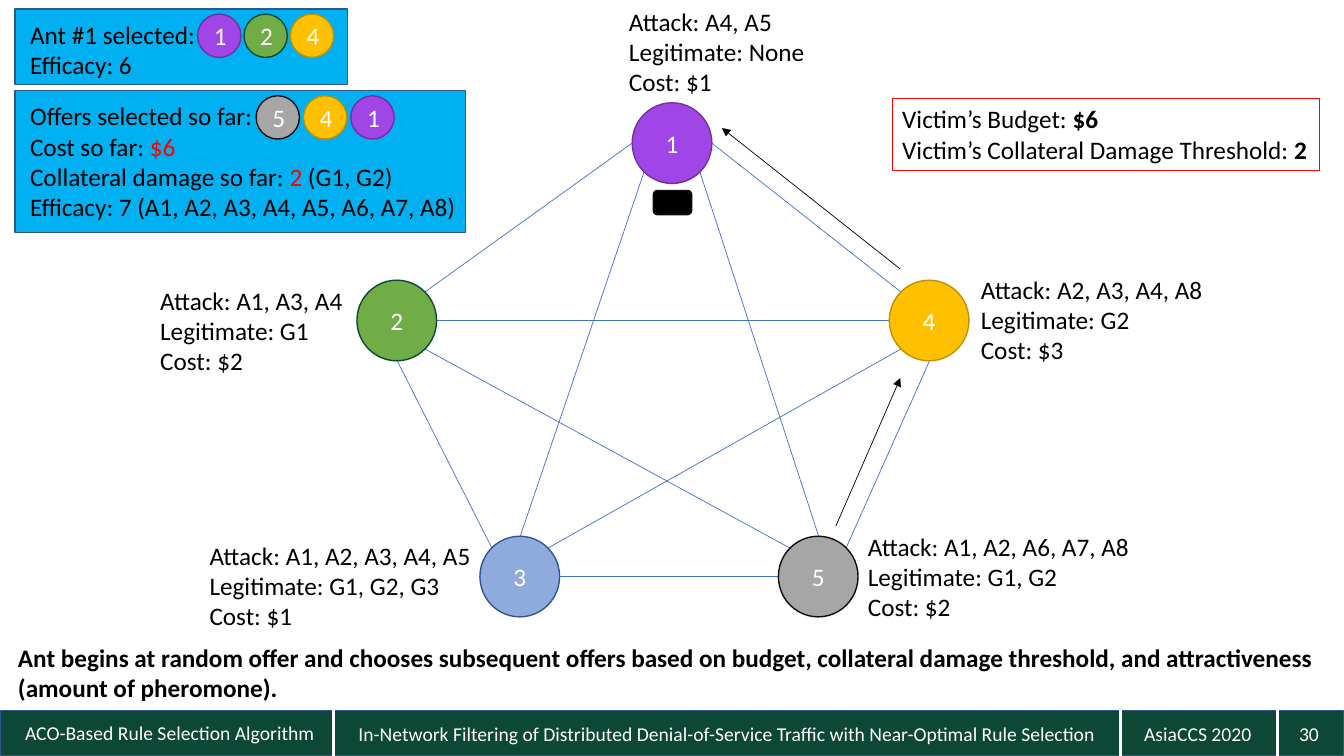
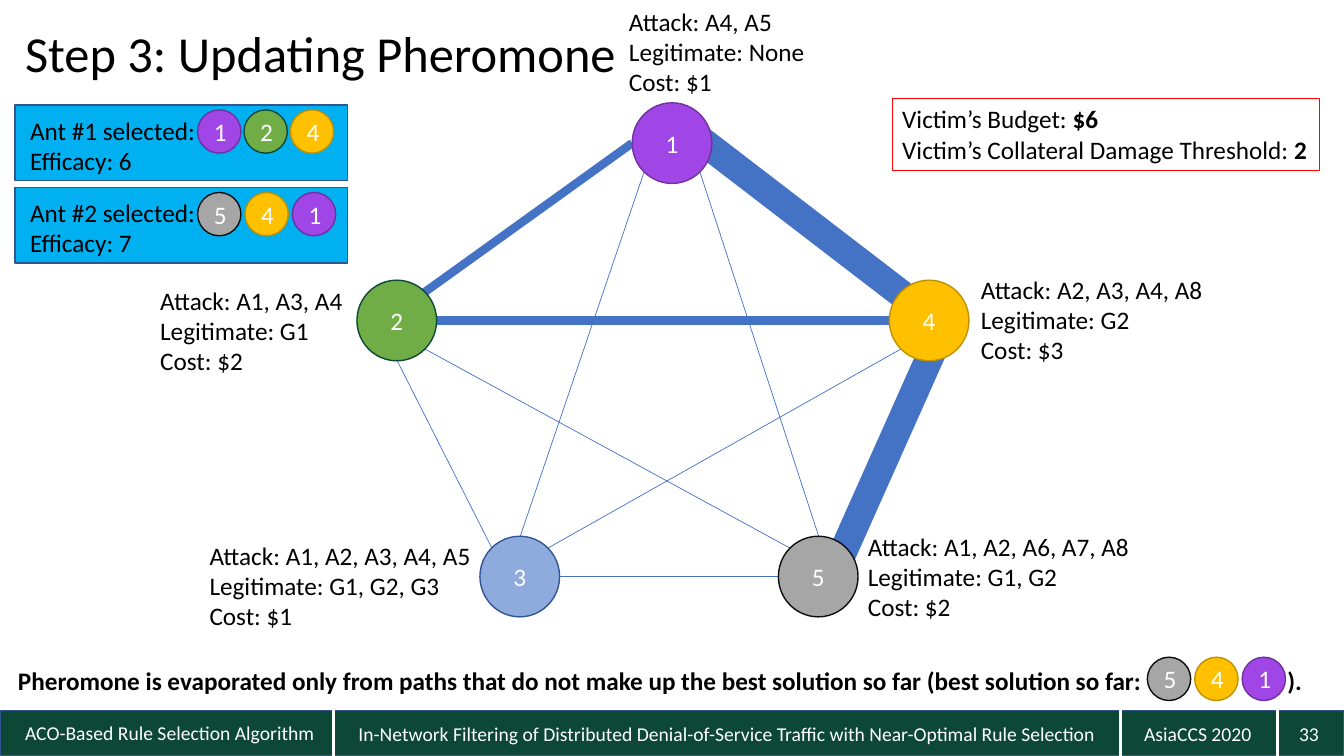
from math import cos, radians, sin

from lxml.etree import SubElement
from pptx import Presentation
from pptx.dml.color import RGBColor
from pptx.enum.shapes import MSO_CONNECTOR as Connector, MSO_SHAPE as Shape
from pptx.enum.text import MSO_ANCHOR as Anchor, PP_ALIGN as Align
from pptx.oxml.ns import qn
from pptx.util import Pt

PX = 9144  # EMU; 100 px to the inch
FONT = "Calibri"
COLORS = {
    "white": "FFFFFF", "black": "000000", "red": "FF0000",
    "panel": "00B0F0", "footer": "0D4735", "outline": "325491",
    "edge": "4472C4", "ink": "0D0D0D",
    "purple": "A046E6", "deep purple": "7030A0", "green": "70AD47",
    "blue": "8FAADC", "gray": "A6A6A6", "gold": "FFC000", "dark gold": "BF9000",
}

# Offer number: fill and outline
OFFER_COLORS = {
    1: ("purple", "deep purple"), 2: ("green", "footer"), 3: ("blue", "outline"),
    4: ("gold", "dark gold"), 5: ("gray", "ink"),
}
NODE_WIDTH, NODE_HEIGHT, TOKEN_SIZE = 79, 80, 43
NODES = {1: (627, 102), 2: (354, 278), 3: (476, 532), 4: (882, 278), 5: (772, 532)}

# Left, top, width, attack, legitimate, cost
LABELS = [
    (614, 1, 344, "A4, A5", "None", "$1"),
    (149, 278, 205, "A1, A3, A4", "G1", "$2"),
    (198, 531, 285, "A1, A2, A3, A4, A5", "G1, G2, G3", "$1"),
    (851, 522, 344, "A1, A2, A6, A7, A8", "G1, G2", "$2"),
    (963, 267, 344, "A2, A3, A4, A8", "G2", "$3"),
]

COMPASS = {name: 45 * step for step, name in
           enumerate(("E", "SE", "S", "SW", "W", "NW", "N", "NE"))}
EDGES = [
    (2, "NE", 1, "W"), (4, "NW", 1, "E"), (3, "NW", 2, "S"), (5, "NE", 4, "S"),
    (3, "E", 5, "W"), (3, "N", 1, "SW"), (1, "SE", 5, "N"), (2, "E", 4, "W"),
    (3, "NE", 4, "SW"), (2, "SE", 5, "NW"),
]


def rgb(name):
    return RGBColor.from_string(COLORS[name])


def rim(node, side):
    """Point on a node's outline in a compass direction."""
    left, top = NODES[node]
    angle = radians(COMPASS[side])
    return (round(left + NODE_WIDTH / 2 * (1 + cos(angle))),
            round(top + NODE_HEIGHT / 2 * (1 + sin(angle))))


class Builder:
    def __init__(self):
        self.deck = Presentation()
        self.deck.slide_width = 1333 * PX
        self.deck.slide_height = 750 * PX
        self.page = None

    def new_page(self, number):
        self.page = self.deck.slides.add_slide(self.deck.slide_layouts[6])
        self.footer(number)

    def shape(self, kind, left, top, width, height, fill, outline, weight=1):
        item = self.page.shapes.add_shape(
            kind, left * PX, top * PX, width * PX, height * PX)
        item.shadow.inherit = False
        if fill:
            item.fill.solid()
            item.fill.fore_color.rgb = rgb(fill)
        else:
            item.fill.background()
        item.line.color.rgb = rgb(outline)
        item.line.width = Pt(weight)
        return item

    def set_text(self, item, lines, size=18, color="black", align=Align.LEFT,
                 anchor=Anchor.TOP, bold=False, spacing=None):
        """Fill an item with lines; a line is a string or (text, mark) pairs."""
        frame = item.text_frame
        frame.word_wrap = True
        frame.vertical_anchor = anchor
        for index, line in enumerate(lines):
            para = frame.paragraphs[0] if index == 0 else frame.add_paragraph()
            para.alignment = align
            if spacing:
                para.line_spacing = spacing
            spans = [(line, None)] if isinstance(line, str) else line
            for words, mark in spans:
                span = para.add_run()
                span.text = words
                span.font.name = FONT
                span.font.size = Pt(size)
                span.font.bold = bold or mark == "bold"
                span.font.color.rgb = rgb("red" if mark == "red" else color)

    def text(self, left, top, width, height, lines, **style):
        box = self.page.shapes.add_textbox(
            left * PX, top * PX, width * PX, height * PX)
        self.set_text(box, lines, **style)

    def line(self, start, end, color="edge", weight=0.5, arrow=False):
        link = self.page.shapes.add_connector(
            Connector.STRAIGHT, *(value * PX for value in (*start, *end)))
        link.line.color.rgb = rgb(color)
        link.line.width = Pt(weight)
        properties = link.element.spPr
        if arrow:
            SubElement(properties.find(qn("a:ln")), qn("a:tailEnd"), type="triangle")
        SubElement(properties, qn("a:effectLst"))

    def offer(self, number, left, top, width, height):
        circle = self.shape(Shape.OVAL, left, top, width, height,
                            *OFFER_COLORS[number])
        self.set_text(circle, [str(number)], color="white",
                      align=Align.CENTER, anchor=Anchor.MIDDLE)

    def tokens(self, left, top, numbers, step=47):
        for index, number in enumerate(numbers):
            self.offer(number, left + index * step, top, TOKEN_SIZE, TOKEN_SIZE)

    def panel(self, top, width, height):
        self.shape(Shape.RECTANGLE, 15, top, width, height, "panel", "outline")

    def ant_panel(self, top, ant, efficacy, numbers, step=47):
        self.panel(top, 330, 75)
        self.text(20, top + 5, 201, 71,
                  [f"Ant #{ant} selected:", f"Efficacy: {efficacy}"])
        self.tokens(196, top + 5, numbers, step)

    def network(self, weights, wide_lines=()):
        """Draw the offer graph; a weight of 0 leaves an edge out."""
        for first, first_side, second, second_side in EDGES:
            weight = weights.get((first, second), 0.5)
            if weight:
                self.line(rim(first, first_side), rim(second, second_side),
                          weight=weight)
        for start, end in wide_lines:
            self.line(start, end, weight=20)
        for number, (left, top) in NODES.items():
            self.offer(number, left, top, NODE_WIDTH, NODE_HEIGHT)
        for left, top, width, attack, legitimate, cost in LABELS:
            self.text(left, top, width, 101,
                      [f"Attack: {attack}", f"Legitimate: {legitimate}",
                       f"Cost: {cost}"])

    def limits(self):
        """Box with the victim's budget and damage threshold."""
        box = self.shape(Shape.RECTANGLE, 885, 98, 424, 71, None, "red", 0.75)
        self.set_text(box, [
            [("Victim’s Budget: ", None), ("$6", "bold")],
            [("Victim’s Collateral Damage Threshold: ", None), ("2", "bold")],
        ])

    def footer(self, number):
        self.shape(Shape.RECTANGLE, 0, 705, 1333, 45, "footer", "outline")
        for left, top, width, words, align in (
            (15, 710, 315, "ACO-Based Rule Selection Algorithm", Align.LEFT),
            (345, 711, 752, "In-Network Filtering of Distributed Denial-of-Service "
             "Traffic with Near-Optimal Rule Selection", Align.CENTER),
            (1123, 711, 130, "AsiaCCS 2020", Align.CENTER),
            (1218, 711, 100, str(number), Align.RIGHT),
        ):
            self.text(left, top, width, 34, [words], size=14, color="white",
                      align=align)
        for x in (331, 1111, 1267):
            self.line((x, 697), (x, 750), "white", 2.25)


def selection_page(builder):
    builder.new_page(30)
    builder.network({})
    builder.shape(Shape.ROUNDED_RECTANGLE, 648, 189, 38, 24, "black", "ink")
    builder.limits()
    builder.ant_panel(9, 1, 6, (1, 2, 4), step=46)
    builder.panel(90, 447, 141)
    builder.text(20, 95, 455, 131, [
        "Offers selected so far:",
        [("Cost so far: ", None), ("$6", "red")],
        [("Collateral damage so far: ", None), ("2", "red"), (" (G1, G2)", None)],
        "Efficacy: 7 (A1, A2, A3, A4, A5, A6, A7, A8)",
    ])
    builder.tokens(254, 95, (5, 4, 1))
    builder.line((829, 522), (893, 375), "black", arrow=True)
    builder.line((893, 267), (716, 127), "black", arrow=True)
    builder.text(8, 632, 1311, 71, [
        "Ant begins at random offer and chooses subsequent offers based on budget, "
        "collateral damage threshold, and attractiveness (amount of pheromone)."
    ], bold=True)


def pheromone_page(builder):
    builder.new_page(33)
    builder.text(15, 0, 620, 111, ["Step 3: Updating Pheromone"], size=36,
                 anchor=Anchor.MIDDLE, spacing=0.9)
    builder.network(
        {(2, 1): 6, (2, 4): 6, (4, 1): 0, (5, 4): 0},
        wide_lines=[((905, 300), (694, 138)), ((831, 559), (926, 346))])
    builder.limits()
    builder.ant_panel(104, 1, 6, (1, 2, 4), step=46)
    builder.ant_panel(186, 2, 7, (5, 4, 1))
    builder.text(8, 655, 1140, 40, [
        "Pheromone is evaporated only from paths that do not make up the best "
        "solution so far (best solution so far:"
    ], bold=True)
    builder.tokens(1138, 652, (5, 4, 1))
    builder.text(1267, 655, 50, 40, [")."], bold=True)


def main():
    builder = Builder()
    selection_page(builder)
    pheromone_page(builder)
    builder.deck.save("out.pptx")


if __name__ == "__main__":
    main()
